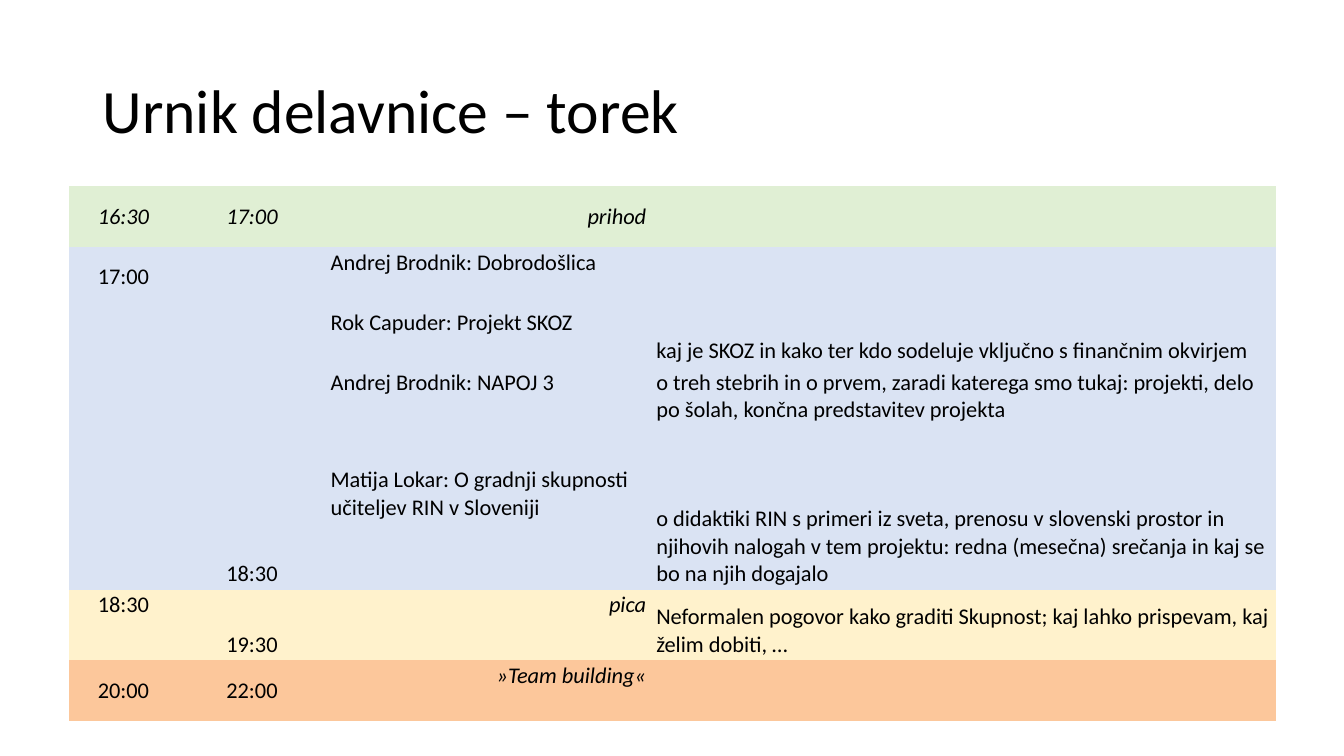
from pptx import Presentation
from pptx.dml.color import RGBColor
from pptx.enum.text import MSO_ANCHOR as Anchor, PP_ALIGN as Align
from pptx.util import Inches, Pt

# Content: each row is fill, height, then its four cells
# A cell is (text, style), where style names alignment, anchor and slant
TITLE = "Urnik delavnice – torek"
FONT = "Calibri"
BLACK = "000000"
GREEN, BLUE, YELLOW, ORANGE = "E0EFD4", "DAE3F3", "FFF2CC", "FCC79B"
EMPTY = ("", "left top")
COLUMNS = [1.09, 1.46, 3.23, 6.2]
ROWS = [
    (GREEN, 0.6, [("16:30", "center middle italic"), ("17:00", "center middle italic"),
                  ("prihod", "right middle italic"), EMPTY]),
    (BLUE, 0.6, [("17:00", "center middle"), EMPTY,
                 ("Andrej Brodnik: Dobrodošlica", "left top"), EMPTY]),
    (BLUE, 0.59, [EMPTY, EMPTY, ("Rok Capuder: Projekt SKOZ", "left top"),
                  ("kaj je SKOZ in kako ter kdo sodeluje vključno s finančnim okvirjem",
                   "left bottom")]),
    (BLUE, 0.97, [EMPTY, EMPTY, ("Andrej Brodnik: NAPOJ 3", "left top"),
                  ("o treh stebrih in o prvem, zaradi katerega smo tukaj: projekti, "
                   "delo po šolah, končna predstavitev projekta", "left top")]),
    (BLUE, 1.24, [EMPTY, ("18:30", "center bottom"),
                  ("Matija Lokar: O gradnji skupnosti učiteljev RIN v Sloveniji", "left top"),
                  ("o didaktiki RIN s primeri iz sveta, prenosu v slovenski prostor in "
                   "njihovih nalogah v tem projektu: redna (mesečna) srečanja in kaj se "
                   "bo na njih dogajalo", "left bottom")]),
    (YELLOW, 0.7, [("18:30", "center top"), ("19:30", "center bottom"),
                   ("pica", "right top italic"),
                   ("Neformalen pogovor kako graditi Skupnost; kaj lahko prispevam, "
                    "kaj želim dobiti, …", "left bottom")]),
    (ORANGE, 0.6, [("20:00", "center middle"), ("22:00", "center middle"),
                   ("»Team building«", "right top italic"), EMPTY]),
]
ALIGNS = {"left": Align.LEFT, "center": Align.CENTER, "right": Align.RIGHT}
ANCHORS = {"top": Anchor.TOP, "middle": Anchor.MIDDLE, "bottom": Anchor.BOTTOM}
PLAIN_TABLE_STYLE = "{2D5ABB26-0587-4C30-8999-92F81FD0307C}"


def color(value):
    return RGBColor.from_string(value)


def add_run(paragraph, text, size, italic=False):
    run = paragraph.add_run()
    run.text = text
    run.font.name = FONT
    run.font.size = Pt(size)
    run.font.italic = italic
    run.font.color.rgb = color(BLACK)


def add_title(slide):
    box = slide.shapes.add_textbox(Inches(0.92), Inches(0.4), Inches(11.5), Inches(1.45))
    frame = box.text_frame
    frame.word_wrap = True
    frame.vertical_anchor = Anchor.MIDDLE
    frame.paragraphs[0].line_spacing = 0.9
    add_run(frame.paragraphs[0], TITLE, 44)


def fill_cell(cell, text, style, fill):
    align, anchor, *slant = style.split()
    cell.fill.solid()
    cell.fill.fore_color.rgb = color(fill)
    cell.margin_left = cell.margin_right = Inches(0.05)
    cell.margin_top = cell.margin_bottom = Inches(0.02)
    cell.vertical_anchor = ANCHORS[anchor]
    if text:
        paragraph = cell.text_frame.paragraphs[0]
        paragraph.alignment = ALIGNS[align]
        add_run(paragraph, text, 16, bool(slant))


def add_schedule(slide):
    height = sum(row_height for _, row_height, _ in ROWS)
    frame = slide.shapes.add_table(len(ROWS), len(COLUMNS), Inches(0.68), Inches(1.85),
                                   Inches(sum(COLUMNS)), Inches(height))
    table = frame.table
    table.first_row = table.horz_banding = False
    # Plain style without borders
    table._tbl.tblPr[0].text = PLAIN_TABLE_STYLE
    for column, width in zip(table.columns, COLUMNS):
        column.width = Inches(width)
    for row, (fill, row_height, cells) in zip(table.rows, ROWS):
        row.height = Inches(row_height)
        for cell, (text, style) in zip(row.cells, cells):
            fill_cell(cell, text, style, fill)


def main():
    presentation = Presentation()
    presentation.slide_width = Inches(13.33)
    presentation.slide_height = Inches(7.5)
    slide = presentation.slides.add_slide(presentation.slide_layouts[6])
    add_title(slide)
    add_schedule(slide)
    presentation.save("out.pptx")


if __name__ == "__main__":
    main()
